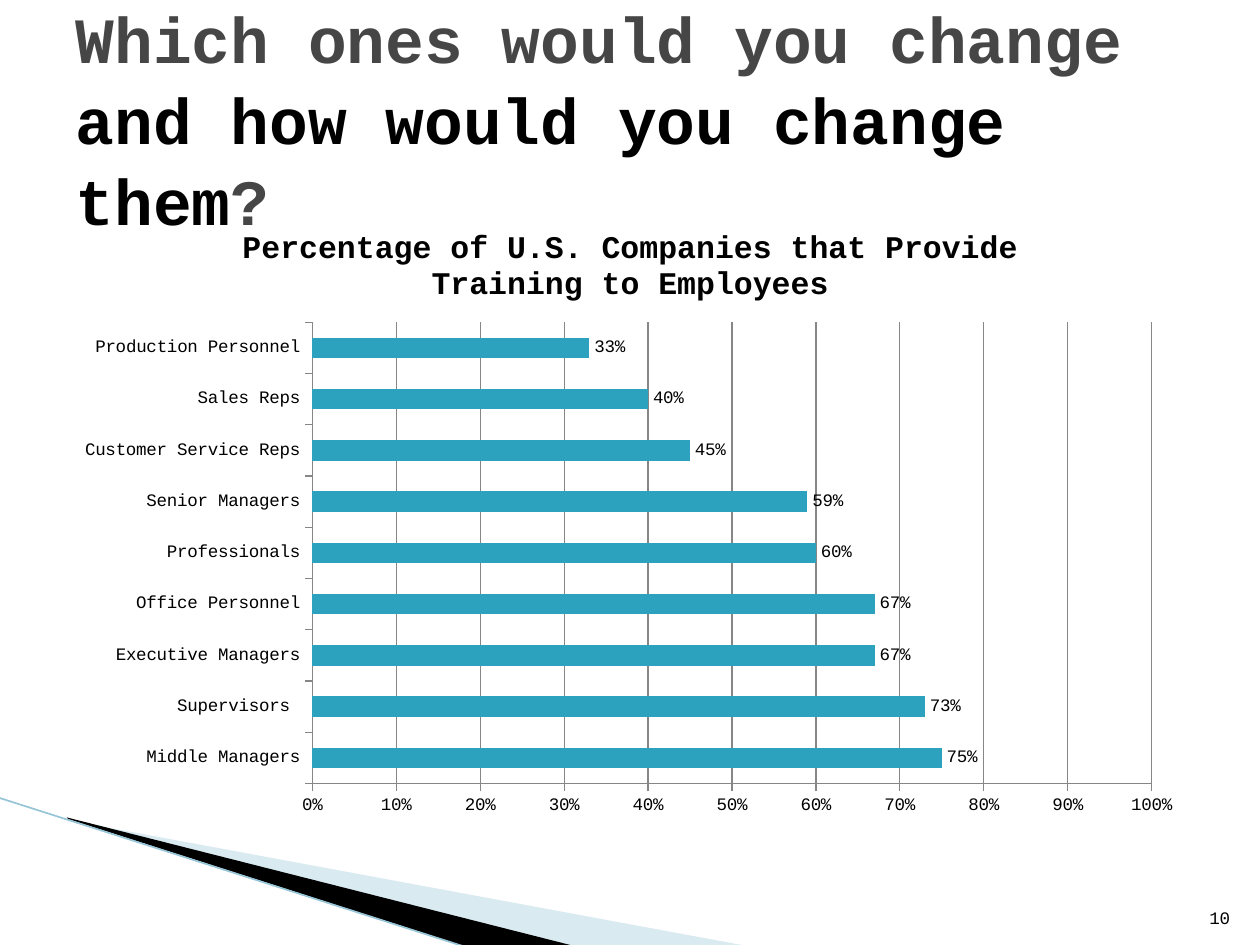
from lxml import etree
from pptx import Presentation
from pptx import util as u
from pptx.chart.data import CategoryChartData
from pptx.dml.color import RGBColor
from pptx.enum import chart as ch, shapes, text
from pptx.oxml import parse_xml
from pptx.oxml.ns import nsdecls, qn

CHART_TITLE = "Percentage of U.S. Companies that Provide Training to Employees"
TRAINING = {
    "Middle Managers": 0.75, "Supervisors ": 0.73, "Executive Managers": 0.67,
    "Office Personnel": 0.67, "Professionals": 0.6, "Senior Managers": 0.59,
    "Customer Service Reps": 0.45, "Sales Reps": 0.4, "Production Personnel": 0.33,
}
PLOT = {"x": 0.22, "y": 0.19, "w": 0.74, "h": 0.74}  # shares of the chart frame


def rgb(value):
    return RGBColor.from_string(value)


def apply(obj, values):
    for name, value in values.items():
        setattr(obj, name, value)


class Deck:
    font = "Courier New"
    black, grey, bar, grid = "000000", "464646", "2DA2BF", "868686"

    def __init__(self):
        self.prs = Presentation()
        apply(self.prs, {"slide_width": u.Cm(25.4), "slide_height": u.Cm(19.05)})
        self.s = self.prs.slides.add_slide(self.prs.slide_layouts[5])

    def style(self, font, size, color, bold=False):
        apply(font, {"name": self.font, "size": u.Pt(size), "bold": bold})
        font.color.rgb = rgb(color)

    def fill_text(self, sp, box, runs, size, align, anchor, bold=False, spacing=1.0):
        apply(sp, dict(zip(("left", "top", "width", "height"), map(u.Cm, box))))
        tf = sp.text_frame
        apply(tf, {"word_wrap": True, "auto_size": text.MSO_AUTO_SIZE.NONE,
                   "vertical_anchor": anchor})
        p = tf.paragraphs[0]
        apply(p, {"alignment": align, "line_spacing": spacing})
        for words, color in runs:
            r = p.add_run()
            r.text = words
            self.style(r.font, size, color, bold)

    def title(self, box, runs):
        self.fill_text(self.s.shapes.title, box, runs, 36.9, text.PP_ALIGN.LEFT,
                       text.MSO_ANCHOR.MIDDLE, bold=True, spacing=1.05)

    def page_number(self, box, number):
        sp = self.s.shapes.add_textbox(*map(u.Cm, box))
        self.fill_text(sp, box, [(number, self.black)], 10, text.PP_ALIGN.RIGHT,
                       text.MSO_ANCHOR.BOTTOM)

    def wedge(self, points, color, opacity=100):
        (x, y), *rest = [(u.Cm(a), u.Cm(b)) for a, b in points]
        builder = self.s.shapes.build_freeform(x, y)
        builder.add_line_segments(rest, close=True)
        sp = builder.convert_to_shape()
        sp.shadow.inherit = False
        sp.fill.solid()
        sp.fill.fore_color.rgb = rgb(color)
        sp.line.fill.background()
        if opacity < 100:
            clr = sp.fill._xPr.find(".//" + qn("a:srgbClr"))
            etree.SubElement(clr, qn("a:alpha"), val=str(opacity * 1000))

    def line(self, start, end, color, width):
        c = self.s.shapes.add_connector(shapes.MSO_CONNECTOR.STRAIGHT,
                                        *map(u.Cm, start + end))
        c.line.color.rgb = rgb(color)
        c.line.width = u.Pt(width)
        etree.SubElement(c._element.spPr, qn("a:effectLst"))

    def bar_chart(self, box, title, values):
        data = CategoryChartData(number_format="0%")
        data.categories = list(values)
        data.add_series(title, list(values.values()))
        chart = self.s.shapes.add_chart(ch.XL_CHART_TYPE.BAR_CLUSTERED,
                                        *map(u.Cm, box), data).chart
        self.style(chart.font, 10, self.black)
        apply(chart, {"has_legend": False, "has_title": True})
        tf = chart.chart_title.text_frame
        tf.text = title
        self.style(tf.paragraphs[0].runs[0].font, 18, self.black, bold=True)
        chart.chart_title.include_in_layout = False

        for axis in (chart.category_axis, chart.value_axis):
            apply(axis, {"major_tick_mark": ch.XL_TICK_MARK.OUTSIDE,
                         "minor_tick_mark": ch.XL_TICK_MARK.NONE})
            axis.format.line.color.rgb = rgb(self.grid)
        axis = chart.value_axis
        apply(axis, {"minimum_scale": 0, "maximum_scale": 1, "major_unit": 0.1,
                     "has_major_gridlines": True})
        axis.major_gridlines.format.line.color.rgb = rgb(self.grid)
        apply(axis.tick_labels, {"number_format": "0%", "number_format_is_linked": False})

        plot = chart.plots[0]
        apply(plot, {"gap_width": 150, "vary_by_categories": False, "has_data_labels": True})
        apply(plot.data_labels, {"show_value": True, "number_format": "0%",
                                 "number_format_is_linked": False,
                                 "position": ch.XL_LABEL_POSITION.OUTSIDE_END})
        fill = plot.series[0].format.fill
        fill.solid()
        fill.fore_color.rgb = rgb(self.bar)
        self.place_plot(chart)

    def place_plot(self, chart):
        """Fix the inner plot area at the shares given in PLOT."""
        area = chart._chartSpace.chart.plotArea
        for old in area.findall(qn("c:layout")):
            area.remove(old)
        modes = "".join(f'<c:{k}Mode val="edge"/>' for k in "xy")
        sizes = "".join(f'<c:{k} val="{v}"/>' for k, v in PLOT.items())
        area.insert(0, parse_xml(
            f'<c:layout {nsdecls("c")}><c:manualLayout><c:layoutTarget val="inner"/>'
            f'{modes}{sizes}</c:manualLayout></c:layout>'))


def main():
    deck = Deck()
    deck.wedge([(1.4, 16.54), (15.11, 19.08), (11.58, 19.08), (1.4, 16.51)], "A0CBDC", 40)
    deck.wedge([(1.35, 16.48), (11.61, 19.08), (9.45, 19.1), (1.37, 16.51)], deck.black)
    deck.line((-0.03, 16.08), (9.42, 19.1), "97C5D8", 0.95)
    deck.title((1.27, 0.76, 22.86, 3.18), [
        ("Which ones would you change ", deck.grey),
        ("and how would you change them", deck.black),
        ("?", deck.grey)])
    deck.bar_chart((1.27, 4.11, 22.86, 12.57), CHART_TITLE, TRAINING)
    deck.page_number((24.03, 17.81, 1.02, 1.02), "10")
    deck.prs.save("out.pptx")


if __name__ == "__main__":
    main()
